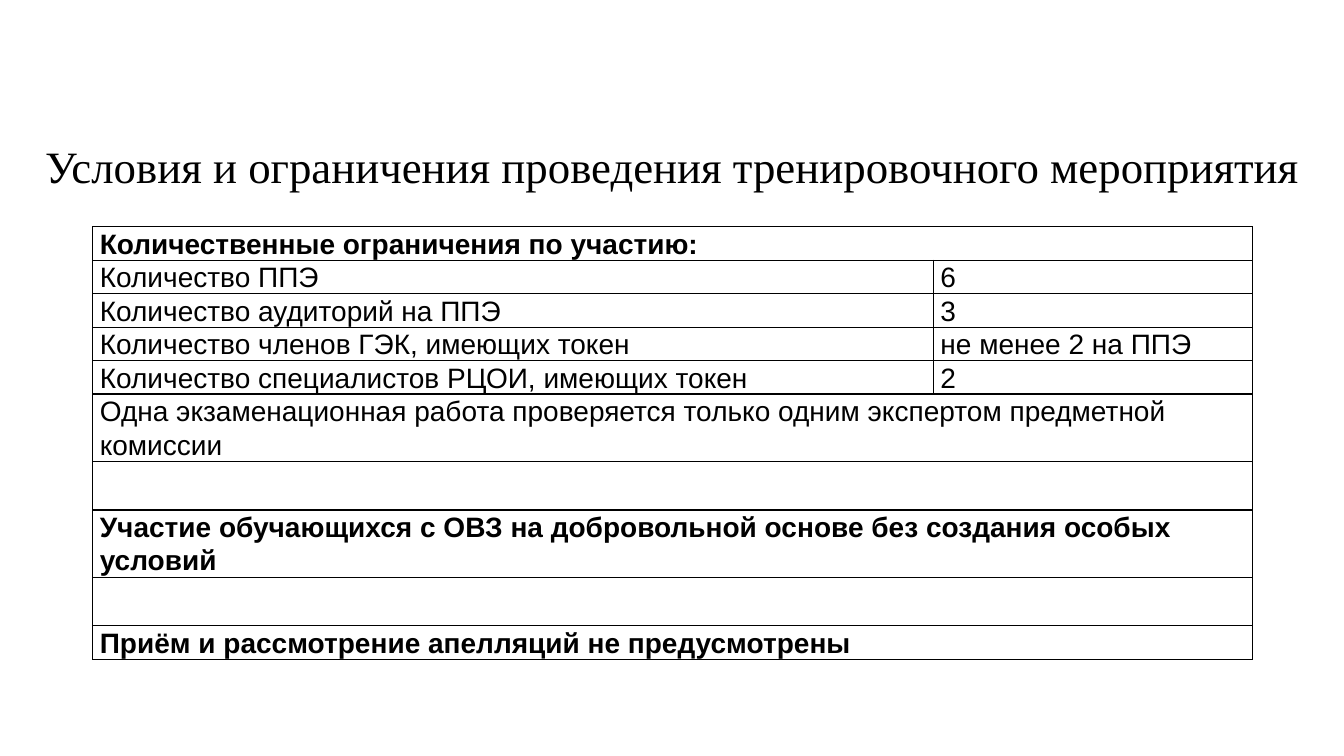
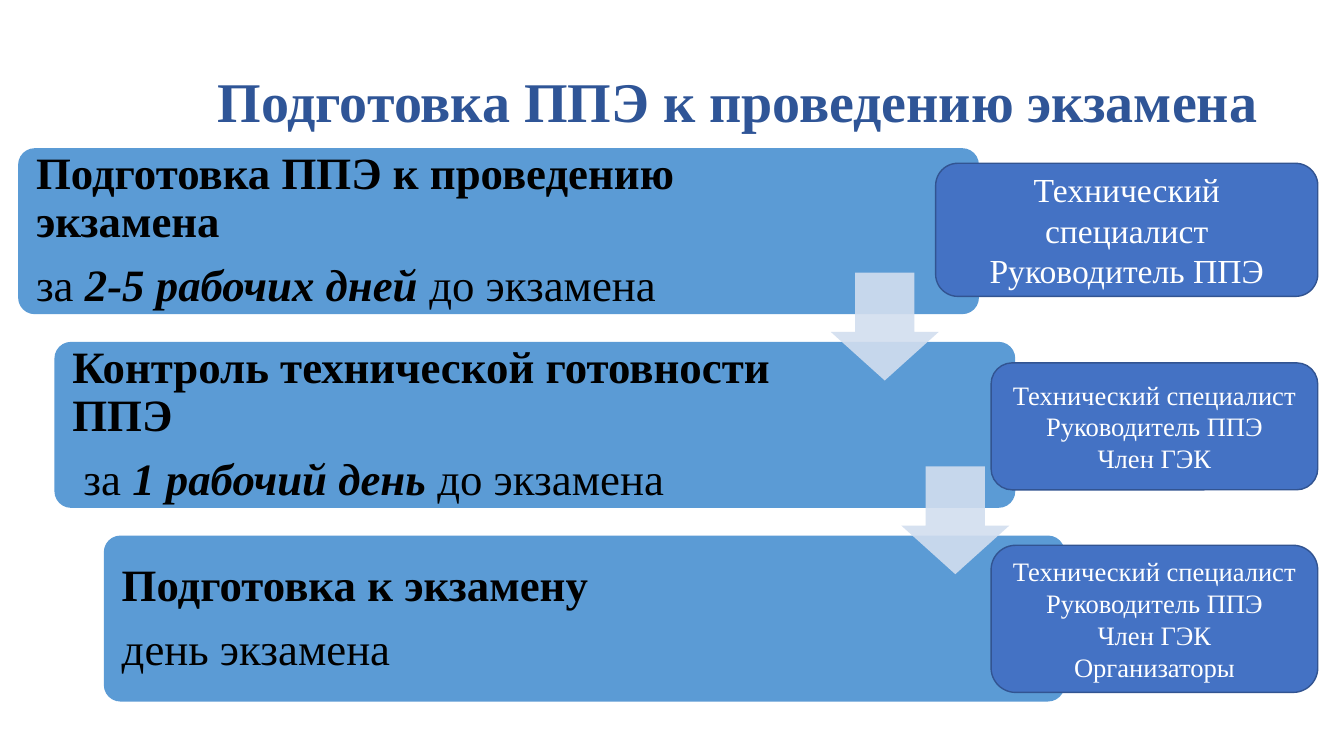
import dataclasses

import lxml.etree
import pptx
import pptx.dml.color
import pptx.enum.shapes
import pptx.enum.text
import pptx.oxml.ns
import pptx.util

Inches = pptx.util.Inches
Pt = pptx.util.Pt
SHAPES = pptx.enum.shapes.MSO_SHAPE
ALIGN = pptx.enum.text.PP_ALIGN
MIDDLE = pptx.enum.text.MSO_ANCHOR.MIDDLE
qn = pptx.oxml.ns.qn


@dataclasses.dataclass(frozen=True)
class Theme:
    serif: str = "Times New Roman"
    sans: str = "Arial"
    ink: str = "000000"
    paper: str = "FFFFFF"
    heading: str = "2F5597"
    step: str = "5B9BD5"
    arrow: str = "D2DEEF"
    arrow_opacity: int = 90
    role: str = "4472C4"
    role_edge: str = "325491"
    heading_size: int = 40
    text_size: int = 32
    lead_role_size: int = 24
    table_size: int = 20
    role_size: int = 19


@dataclasses.dataclass(frozen=True)
class Box:
    left: float
    top: float
    width: float
    height: float

    def emu(self):
        return [Inches(side) for side in dataclasses.astuple(self)]


THEME = Theme()
SLIDE_WIDTH, SLIDE_HEIGHT = 13.33, 7.5
TITLE_ONLY = 5

ROW, TALL_ROW, GAP_ROW = 0.33, 0.67, 0.48
LIMITS = [  # row height, bold, texts; a single text spans both columns
    (ROW, True, ["Количественные ограничения по участию:"]),
    (ROW, False, ["Количество ППЭ", "6"]),
    (ROW, False, ["Количество аудиторий на ППЭ", "3"]),
    (ROW, False, ["Количество членов ГЭК, имеющих токен", "не менее 2 на ППЭ"]),
    (ROW, False, ["Количество специалистов РЦОИ, имеющих токен", "2"]),
    (TALL_ROW, False, ["Одна экзаменационная работа проверяется только одним "
                       "экспертом предметной комиссии"]),
    (GAP_ROW, False, [""]),
    (TALL_ROW, True, ["Участие обучающихся с ОВЗ на добровольной основе "
                      "без создания особых условий"]),
    (GAP_ROW, False, [""]),
    (ROW, True, ["Приём и рассмотрение апелляций не предусмотрены"]),
]

STEPS = [  # left edge, name, term as (plain, stressed, plain), term indent
    (0.18, "Подготовка ППЭ к проведению экзамена",
     ("за ", "2-5 рабочих дней ", "до экзамена"), 0),
    (0.54, "Контроль технической готовности ППЭ",
     ("за ", "1 рабочий день ", "до экзамена"), 0.11),
    (1.03, "Подготовка к экзамену", ("день экзамена",), 0),
]
ARROW_LEFTS = [8.06, 8.76]
ROLES = [  # box within the process area, type size, people
    (Box(9.1, 0.15, 3.79, 1.32), THEME.lead_role_size,
     ["Технический специалист", "Руководитель ППЭ"]),
    (Box(9.65, 2.13, 3.24, 1.26), THEME.role_size,
     ["Технический специалист", "Руководитель ППЭ", "Член ГЭК"]),
    (Box(9.65, 3.94, 3.24, 1.46), THEME.role_size,
     ["Технический специалист", "Руководитель ППЭ", "Член ГЭК", "Организаторы"]),
]


def rgb(colour):
    return pptx.dml.color.RGBColor.from_string(colour)


def style(paragraph, size, colour=THEME.ink, name=THEME.serif, bold=False,
          align=ALIGN.LEFT, spacing=1.0):
    paragraph.alignment = align
    paragraph.line_spacing = spacing
    font = paragraph.font
    font.name, font.size, font.bold = name, Pt(size), bold
    font.color.rgb = rgb(colour)


def set_margins(holder, left, top, right, bottom):
    holder.margin_left, holder.margin_top = Inches(left), Inches(top)
    holder.margin_right, holder.margin_bottom = Inches(right), Inches(bottom)


def add_titled_slide(deck, text, box, wrap=True, **look):
    slide = deck.slides.add_slide(deck.slide_layouts[TITLE_ONLY])
    title = slide.shapes.title
    title.left, title.top, title.width, title.height = box.emu()
    frame = title.text_frame
    frame.text = text
    frame.auto_size = pptx.enum.text.MSO_AUTO_SIZE.NONE
    frame.word_wrap = wrap
    frame.vertical_anchor = MIDDLE
    style(frame.paragraphs[0], align=ALIGN.CENTER, **look)
    return slide


def add_block(slide, preset, box, fill, adjustments=()):
    block = slide.shapes.add_shape(preset, *box.emu())
    block.shadow.inherit = False
    block.fill.solid()
    block.fill.fore_color.rgb = rgb(fill)
    block.line.fill.background()
    for index, value in enumerate(adjustments):
        block.adjustments[index] = value
    return block


def outline_cell(cell):
    properties = cell._tc.get_or_add_tcPr()
    for side in ("a:lnL", "a:lnR", "a:lnT", "a:lnB"):
        line = lxml.etree.SubElement(properties, qn(side), w=str(Pt(1)))
        fill = lxml.etree.SubElement(line, qn("a:solidFill"))
        lxml.etree.SubElement(fill, qn("a:srgbClr"), val=THEME.ink)
    cell.fill.background()


def add_limits_table(slide, box, label_share=0.725):
    table = slide.shapes.add_table(len(LIMITS), 2, *box.emu()).table
    table.first_row = table.horz_banding = False
    for column, share in zip(table.columns, (label_share, 1 - label_share)):
        column.width = Inches(box.width * share)
    for index, (height, bold, texts) in enumerate(LIMITS):
        table.rows[index].height = Inches(height)
        cells = [table.cell(index, column) for column in range(2)]
        for cell in cells:
            outline_cell(cell)
            set_margins(cell, 0.07, 0, 0.07, 0)
        if len(texts) == 1:
            cells[0].merge(cells[1])
        for cell, text in zip(cells, texts):
            paragraph = cell.text_frame.paragraphs[0]
            if text:
                paragraph.text = text
            style(paragraph, THEME.table_size, name=THEME.sans, bold=bold, spacing=1.07)


def add_step(slide, box, name, term, indent):
    card = add_block(slide, SHAPES.ROUNDED_RECTANGLE, box, THEME.step, [0.1])
    frame = card.text_frame
    frame.word_wrap = True
    frame.vertical_anchor = MIDDLE
    set_margins(frame, 0.13, 0.13, 2, 0.13)
    frame.text = name
    term_line = frame.add_paragraph()
    term_line._p.get_or_add_pPr().set("marL", str(Inches(indent)))
    for index, text in enumerate(term):
        run = term_line.add_run()
        run.text = text
        if index == 1:
            run.font.bold = run.font.italic = True
    for paragraph, bold in zip(frame.paragraphs, (True, False)):
        style(paragraph, THEME.text_size, bold=bold, spacing=0.9)
        paragraph.space_after = Pt(0.35 * THEME.text_size)


def add_arrow(slide, box):
    arrow = add_block(slide, SHAPES.DOWN_ARROW, box, THEME.arrow, [0.55, 0.45])
    colour = arrow._element.spPr.find(qn("a:solidFill"))[0]
    lxml.etree.SubElement(colour, qn("a:alpha"), val=str(THEME.arrow_opacity * 1000))


def add_role(slide, box, size, people):
    role = add_block(slide, SHAPES.ROUNDED_RECTANGLE, box, THEME.role)
    role.line.color.rgb = rgb(THEME.role_edge)
    role.line.width = Pt(1)
    frame = role.text_frame
    frame.word_wrap = True
    frame.vertical_anchor = MIDDLE
    set_margins(frame, 0.12, 0.06, 0.12, 0.06)
    frame.text = "\n".join(people)
    for paragraph in frame.paragraphs:
        style(paragraph, size, THEME.paper, align=ALIGN.CENTER)


def add_process(slide, area):
    """Draw the staircase of steps, the arrows between them and the roles."""
    pitch = area.height * 0.35
    step_height = area.height * 0.3
    arrow_side = 1.07
    for index, (left, name, term, indent) in enumerate(STEPS):
        box = Box(left, area.top + index * pitch, 9.53, step_height)
        add_step(slide, box, name, term, indent)
    for index, left in enumerate(ARROW_LEFTS):
        top = area.top + index * pitch + 0.75 * step_height
        add_arrow(slide, Box(area.left + left, top, arrow_side, arrow_side))
    for offset, size, people in ROLES:
        box = dataclasses.replace(offset, left=area.left + offset.left,
                                  top=area.top + offset.top)
        add_role(slide, box, size, people)


def main():
    deck = pptx.Presentation()
    deck.slide_width, deck.slide_height = Inches(SLIDE_WIDTH), Inches(SLIDE_HEIGHT)

    limits = add_titled_slide(
        deck, "Условия и ограничения проведения тренировочного мероприятия",
        Box(0.29, 1.32, 12.76, 0.64), wrap=False, size=THEME.text_size)
    table_height = sum(height for height, _, _ in LIMITS)
    add_limits_table(limits, Box(0.92, 2.25, 11.5, table_height))

    preparation = add_titled_slide(
        deck, "Подготовка ППЭ к проведению экзамена", Box(1.49, 0.55, 11.65, 0.97),
        size=THEME.heading_size, colour=THEME.heading, bold=True, spacing=0.9)
    add_process(preparation, Box(0.18, 1.47, 12.89, 5.49))

    deck.save("out.pptx")


if __name__ == "__main__":
    main()
